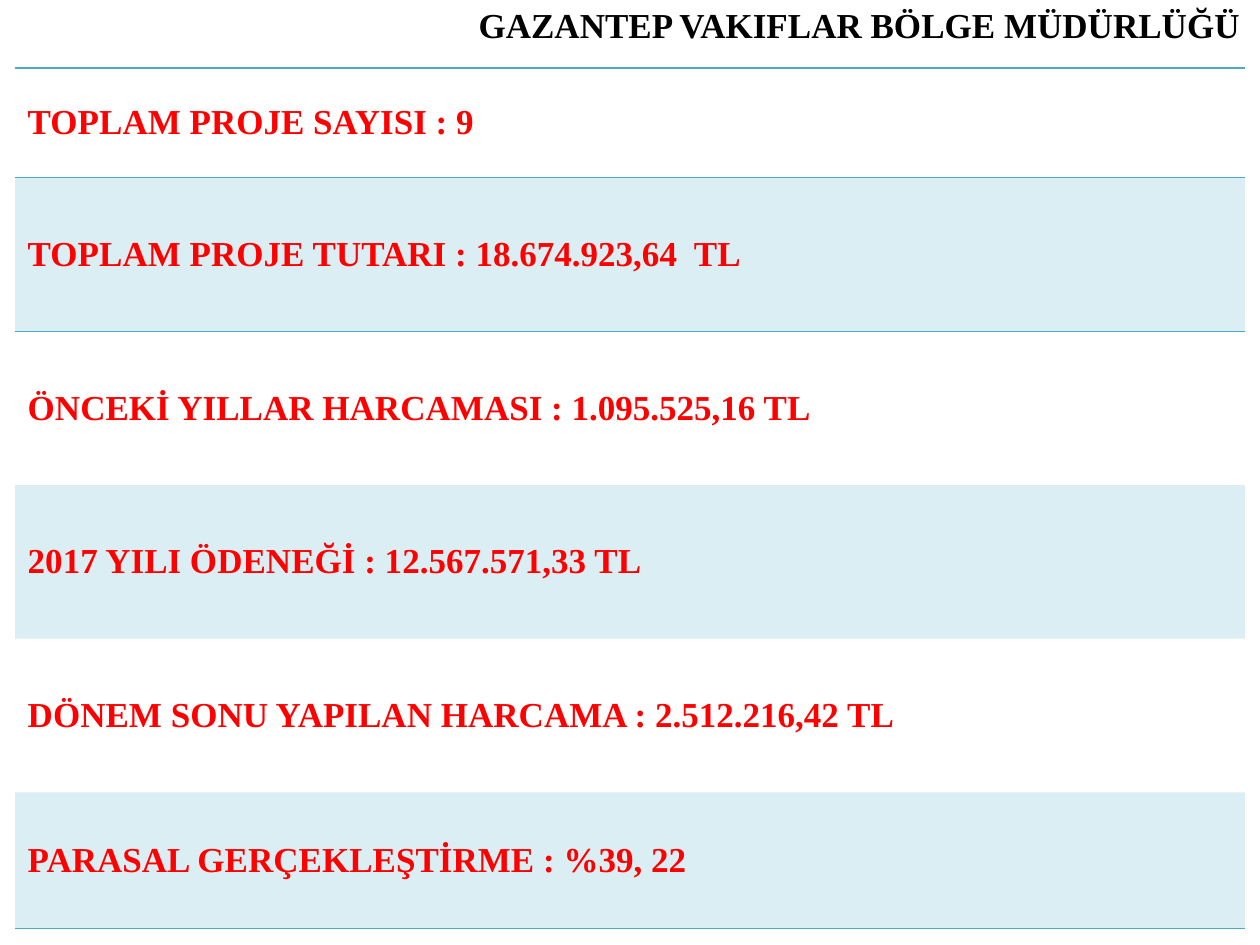
from dataclasses import dataclass

from lxml.etree import SubElement
from pptx import Presentation
from pptx.dml.color import RGBColor
from pptx.enum.text import MSO_ANCHOR as Anchor
from pptx.oxml.ns import qn
from pptx.util import Inches, Pt


@dataclass(frozen=True)
class Theme:
    font: str = "Times New Roman"
    size: int = 20
    title: str = "000000"
    figure: str = "FF0000"
    accent: str = "4BACC6"
    band_alpha: int = 20
    rule: int = 1
    plain_style: str = "{2D5ABB26-0587-4C30-8999-92F81FD0307C}"


THEME = Theme()
TITLE = "GAZANTEP VAKIFLAR BÖLGE MÜDÜRLÜĞÜ"
TITLE_BOX = (3.7, -0.02, 6.3, 0.44)
TABLE_BOX = (0.12, 0.54, 9.76, 6.83)
COLUMN_WIDTHS = (7.56, 2.2)
ROWS = (
    ("TOPLAM PROJE SAYISI : 9", 0.87),
    ("TOPLAM PROJE TUTARI : 18.674.923,64  TL", 1.22),
    ("ÖNCEKİ YILLAR HARCAMASI : 1.095.525,16 TL", 1.22),
    ("2017 YILI ÖDENEĞİ : 12.567.571,33 TL", 1.22),
    ("DÖNEM SONU YAPILAN HARCAMA : 2.512.216,42 TL", 1.22),
    ("PARASAL GERÇEKLEŞTİRME : %39, 22", 1.08),
)


def write(frame, text, color):
    span = frame.paragraphs[0].add_run()
    span.text = text
    formats = {"name": THEME.font, "size": Pt(THEME.size), "bold": True}
    for name, value in formats.items():
        setattr(span.font, name, value)
    span.font.color.rgb = RGBColor.from_string(color)


def add_rule(cell, side):
    properties = cell._tc.get_or_add_tcPr()
    line = SubElement(properties, qn(f"a:ln{side}"), w=str(Pt(THEME.rule)))
    fill = SubElement(line, qn("a:solidFill"))
    SubElement(fill, qn("a:srgbClr"), val=THEME.accent)


def fill_band(cell):
    cell.fill.solid()
    cell.fill.fore_color.rgb = RGBColor.from_string(THEME.accent)
    color = cell._tc.tcPr.find(f"{qn('a:solidFill')}/{qn('a:srgbClr')}")
    SubElement(color, qn("a:alpha"), val=str(THEME.band_alpha * 1000))


def format_cell(cell, row_index):
    cell.vertical_anchor = Anchor.MIDDLE
    rules = {0: "TB", 1: "T", len(ROWS) - 1: "B"}
    for side in rules.get(row_index, ""):
        add_rule(cell, side)
    if row_index % 2:
        fill_band(cell)
    else:
        cell.fill.background()


def add_figures(page, box):
    holder = page.shapes.add_table(len(ROWS), len(COLUMN_WIDTHS), *map(Inches, box))
    table = holder.table
    table._tbl.tblPr.find(qn("a:tableStyleId")).text = THEME.plain_style
    for name in ("first_row", "horz_banding"):
        setattr(table, name, False)
    for column, width in zip(table.columns, COLUMN_WIDTHS):
        column.width = Inches(width)
    for index, (text, height) in enumerate(ROWS):
        row = table.rows[index]
        row.height = Inches(height)
        for cell in row.cells:
            format_cell(cell, index)
        write(row.cells[0].text_frame, text, THEME.figure)


def add_title(page, box):
    frame = page.shapes.add_textbox(*map(Inches, box)).text_frame
    frame.word_wrap = False
    write(frame, TITLE, THEME.title)


def main():
    deck = Presentation()
    deck.slide_width, deck.slide_height = Inches(10), Inches(7.5)
    page = deck.slides.add_slide(deck.slide_layouts[6])
    add_figures(page, TABLE_BOX)
    add_title(page, TITLE_BOX)
    deck.save("out.pptx")


if __name__ == "__main__":
    main()
